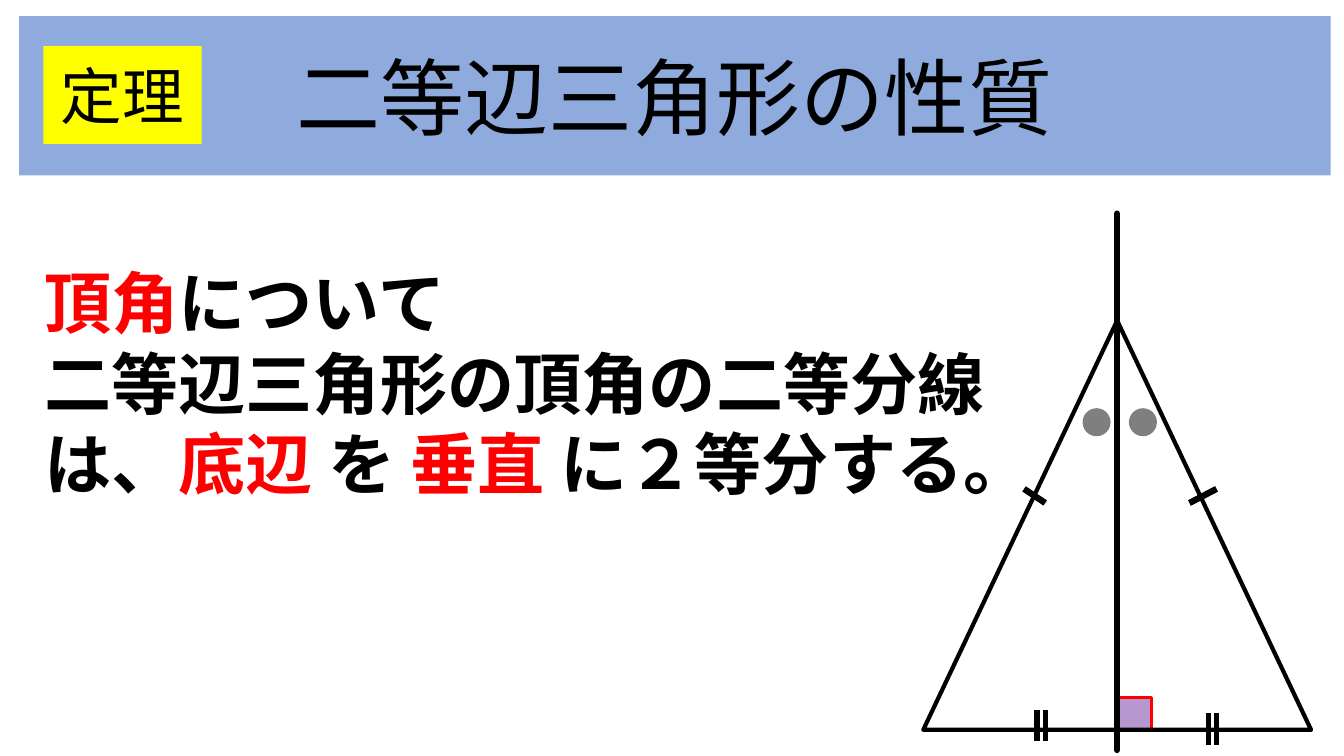
from lxml.etree import SubElement
from pptx import Presentation
from pptx.dml.color import RGBColor
from pptx.enum.shapes import MSO_CONNECTOR as Connector, MSO_SHAPE as Shape
from pptx.enum.text import MSO_ANCHOR as Anchor, PP_ALIGN as Align
from pptx.oxml.ns import qn
from pptx.util import Pt

BLACK = RGBColor(0x00, 0x00, 0x00)
RED = RGBColor(0xFF, 0x00, 0x00)
YELLOW = RGBColor(0xFF, 0xFF, 0x00)
BLUE = RGBColor(0x8F, 0xAA, 0xDC)
PURPLE = RGBColor(0x70, 0x30, 0xA0)
CJK_FONT = "Noto Sans CJK JP"


def add_text(para, text, size, font, color=BLACK, bold=False):
    span = para.add_run()
    span.text = text
    span.font.size = Pt(size)
    span.font.name = font
    span.font.bold = bold
    span.font.color.rgb = color
    SubElement(span.font._element, qn("a:ea"), typeface=CJK_FONT)


def add_figure(kind, left, top, width, height, fill=None, alpha=None,
               line=None, weight=0):
    figure = page.shapes.add_shape(kind, Pt(left), Pt(top), Pt(width), Pt(height))
    figure.shadow.inherit = False
    if fill is None:
        figure.fill.background()
    else:
        figure.fill.solid()
        figure.fill.fore_color.rgb = fill
    if alpha is not None:
        color = figure._element.spPr.find(qn("a:solidFill"))[0]
        SubElement(color, qn("a:alpha"), val=str(alpha * 1000))
    if line is None:
        figure.line.fill.background()
    else:
        figure.line.color.rgb = line
        figure.line.width = Pt(weight)
    return figure


deck = Presentation()
deck.slide_width, deck.slide_height = Pt(960), Pt(540)
page = deck.slides.add_slide(deck.slide_layouts[6])

# Right angle mark, header band, triangle
axis = 797.9
add_figure(Shape.RECTANGLE, axis, 498.2, 24.5, 23, PURPLE, 50, RED, 2.5)
band = add_figure(Shape.RECTANGLE, 13.7, 11.5, 936.7, 113.8, BLUE)
add_figure(Shape.ISOSCELES_TRIANGLE, 659.5, 229, 277, 292.3, line=BLACK, weight=3)

# Theorem statement
box = page.shapes.add_textbox(Pt(24.5), Pt(182.5), Pt(707.8), Pt(181.4))
frame = box.text_frame
frame.word_wrap = True
frame.vertical_anchor = Anchor.MIDDLE
statement = [
    [("頂角", RED), ("について", BLACK)],
    [("二等辺三角形の頂角の二等分線は、", BLACK), ("底辺", RED), (" を ", BLACK),
     ("垂直", RED), (" に２等分する。", BLACK)],
]
for index, spans in enumerate(statement):
    para = frame.add_paragraph() if index else frame.paragraphs[0]
    para.line_spacing = Pt(57.6)
    for text, color in spans:
        add_text(para, text, 48, CJK_FONT, color, bold=True)

# Bisector, equal-side ticks, equal-half ticks
strokes = [
    (axis, 535.7, axis, 152.6, 4.5),
    (731.5, 349.2, 746.6, 359.3, 4.5),
    (849.6, 359.3, 869, 349.2, 4.5),
]
for left, top in [(740.9, 506.9), (863.3, 509.5)]:
    for x in (left, left + 5.8):
        strokes.append((x, top, x, top + 22.7, 4))
for x1, y1, x2, y2, weight in strokes:
    stroke = page.shapes.add_connector(
        Connector.STRAIGHT, Pt(x1), Pt(y1), Pt(x2), Pt(y2))
    stroke.line.color.rgb = BLACK
    stroke.line.width = Pt(weight)
    if x1 == axis:
        stroke._element.spPr.find(qn("a:ln")).set("cap", "rnd")
    SubElement(stroke._element.spPr, qn("a:effectLst"))

# Equal-angle dots
for left in (773.3, 806.4):
    add_figure(Shape.OVAL, left, 291.6, 20, 20, BLACK, 50)

# Header texts
label = add_figure(Shape.RECTANGLE, 31, 33, 113, 69.8, YELLOW)
for holder, text, size in [(band, "二等辺三角形の性質", 60), (label, "定理", 44)]:
    frame = holder.text_frame
    frame.word_wrap = False
    frame.vertical_anchor = Anchor.MIDDLE
    frame.paragraphs[0].alignment = Align.CENTER
    add_text(frame.paragraphs[0], text, size, "Cambria")

deck.save("out.pptx")
